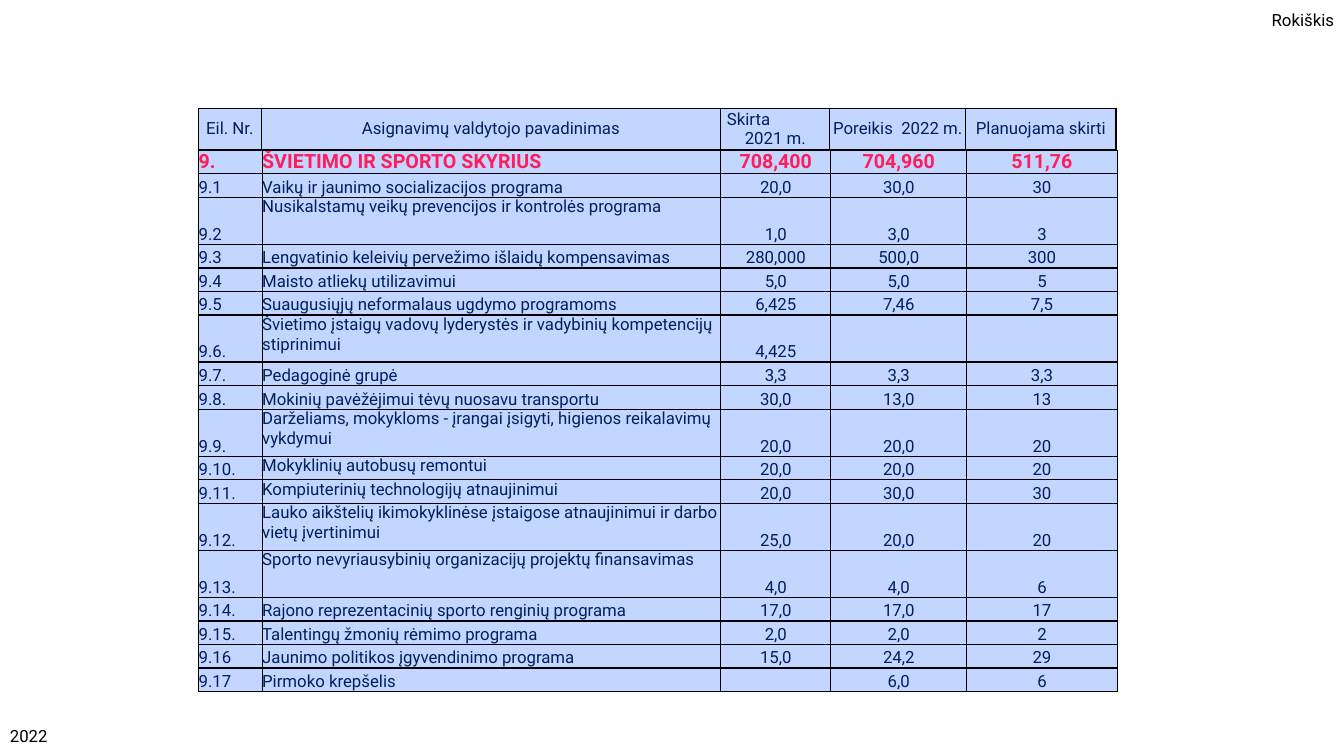
from lxml.etree import SubElement
from pptx import Presentation
from pptx.dml.color import RGBColor
from pptx.enum.text import MSO_ANCHOR as Anchor, PP_ALIGN as Align
from pptx.oxml.ns import qn
from pptx.util import Inches, Pt

BLACK = RGBColor(0x00, 0x00, 0x00)
NAVY = RGBColor(0x00, 0x20, 0x60)
PINK = RGBColor(0xFF, 0x1D, 0x5A)
PALE_BLUE = RGBColor(0xC3, 0xD6, 0xFF)

TABLE_LEFT = 1.97
HEADER_COLUMNS = [0.62, 4.56, 1.08, 1.35, 1.49]
BUDGET_COLUMNS = [0.63, 4.55, 1.09, 1.35, 1.49]
HEADER_HEIGHT = 0.4
BUDGET_HEIGHT = 5.37

HEADERS = ["Eil. Nr.", "Asignavimų valdytojo pavadinimas", "Skirta\n2021 m.",
           "Poreikis  2022 m.", "Planuojama skirti"]
BUDGET = [
    ("9.", "ŠVIETIMO IR SPORTO SKYRIUS", "708,400", "704,960", "511,76"),
    ("9.1", "Vaikų ir jaunimo socializacijos programa", "20,0", "30,0", "30"),
    ("9.2", "Nusikalstamų veikų prevencijos ir kontrolės programa",
     "1,0", "3,0", "3\u00a0".strip()),
    ("9.3", "Lengvatinio keleivių pervežimo išlaidų kompensavimas",
     "280,000", "500,0", "300"),
    ("9.4", "Maisto atliekų utilizavimui", "5,0", "5,0", "5"),
    ("9.5", "Suaugusiųjų neformalaus ugdymo programoms", "6,425", "7,46", "7,5"),
    ("9.6.", "Švietimo įstaigų vadovų lyderystės ir vadybinių kompetencijų stiprinimui",
     "4,425", "", ""),
    ("9.7.", "Pedagoginė grupė", "3,3", "3,3", "3,3"),
    ("9.8.", "Mokinių pavėžėjimui tėvų nuosavu transportu", "30,0", "13,0", "13"),
    ("9.9.", "Darželiams, mokykloms - įrangai įsigyti, higienos reikalavimų vykdymui",
     "20,0", "20,0", "20"),
    ("9.10.", "Mokyklinių autobusų remontui", "20,0", "20,0", "20"),
    ("9.11.", "Kompiuterinių technologijų atnaujinimui", "20,0", "30,0", "30"),
    ("9.12.", "Lauko aikštelių ikimokyklinėse įstaigose atnaujinimui ir darbo vietų įvertinimui",
     "25,0", "20,0", "20"),
    ("9.13.", "Sporto nevyriausybinių organizacijų projektų finansavimas",
     "4,0", "4,0", "6"),
    ("9.14.", "Rajono reprezentacinių sporto renginių programa", "17,0", "17,0", "17"),
    ("9.15.", "Talentingų žmonių rėmimo programa", "2,0", "2,0", "2"),
    ("9.16", "Jaunimo politikos įgyvendinimo programa", "15,0", "24,2", "29"),
    ("9.17", "Pirmoko krepšelis", "", "6,0", "6"),
]
TALL_ROWS = {"9.2", "9.6.", "9.9.", "9.12.", "9.13."}
TOP_NAMES = TALL_ROWS | {"9.10.", "9.11."}


def write(frame, text, size=12, color=BLACK, bold=False, align=Align.LEFT):
    """Fill a text frame, one paragraph for each line of text."""
    frame.word_wrap = True
    for index, line in enumerate(text.split("\n")):
        paragraph = frame.add_paragraph() if index else frame.paragraphs[0]
        paragraph.alignment = align
        if not line:
            # Keeps an empty cell from growing to the default text size
            SubElement(paragraph._p, qn("a:endParaRPr"), sz=str(size * 100))
            continue
        run = paragraph.add_run()
        run.text = line
        font = run.font
        font.name, font.size, font.bold = "Roboto", Pt(size), bold
        font.color.rgb = color


class BudgetSlide:
    def __init__(self, presentation):
        self.slide = presentation.slides.add_slide(presentation.slide_layouts[6])
        self.border_color, self.border_width = BLACK, Pt(1)
        self.cell_fill = PALE_BLUE

    def text(self, left, top, width, height, text, anchor=Anchor.TOP, **text_format):
        box = self.slide.shapes.add_textbox(
            Inches(left), Inches(top), Inches(width), Inches(height))
        box.text_frame.vertical_anchor = anchor
        write(box.text_frame, text, **text_format)

    def table(self, top, columns, heights):
        table = self.slide.shapes.add_table(
            len(heights), len(columns), Inches(TABLE_LEFT), Inches(top),
            Inches(sum(columns)), Inches(sum(heights))).table
        table.first_row = table.horz_banding = False
        for column, width in zip(table.columns, columns):
            column.width = Inches(width)
        for row, height in zip(table.rows, heights):
            row.height = Inches(height)
        return table

    def cell(self, cell, text, anchor, **text_format):
        cell.margin_left = cell.margin_right = 0
        cell.margin_top = cell.margin_bottom = 0
        cell.vertical_anchor = anchor
        properties = cell._tc.get_or_add_tcPr()
        for side in "LRTB":
            line = SubElement(properties, qn(f"a:ln{side}"), w=str(self.border_width))
            fill = SubElement(line, qn("a:solidFill"))
            SubElement(fill, qn("a:srgbClr"), val=str(self.border_color))
        cell.fill.solid()
        cell.fill.fore_color.rgb = self.cell_fill
        write(cell.text_frame, text, **text_format)


def main():
    presentation = Presentation()
    presentation.slide_width, presentation.slide_height = Inches(13.33), Inches(7.5)
    page = BudgetSlide(presentation)
    page.text(10.91, 0.05, 2.42, 0.3, "Rokiškis", align=Align.RIGHT)
    page.text(0, 7.1, 3, 0.4, "2022", anchor=Anchor.MIDDLE)

    header = page.table(1.08, HEADER_COLUMNS, [HEADER_HEIGHT])
    for column, title in enumerate(HEADERS):
        page.cell(header.cell(0, column), title, Anchor.MIDDLE,
                  color=NAVY, align=Align.CENTER)
    granted = header.cell(0, 2).text_frame.paragraphs[0]
    granted.alignment = Align.LEFT
    granted._p.get_or_add_pPr().set("marL", str(Inches(0.06)))

    lines = [2 if row[0] in TALL_ROWS else 1 for row in BUDGET]
    line_height = BUDGET_HEIGHT / sum(lines)
    budget = page.table(1.49, BUDGET_COLUMNS, [line_height * count for count in lines])
    for row, values in enumerate(BUDGET):
        style = dict(size=12, color=NAVY) if row else dict(size=14, color=PINK, bold=True)
        for column, value in enumerate(values):
            on_top = column == 1 and values[0] in TOP_NAMES
            page.cell(budget.cell(row, column), value,
                      Anchor.TOP if on_top else Anchor.BOTTOM,
                      align=Align.CENTER if column > 1 else Align.LEFT, **style)

    presentation.save("out.pptx")


if __name__ == "__main__":
    main()
